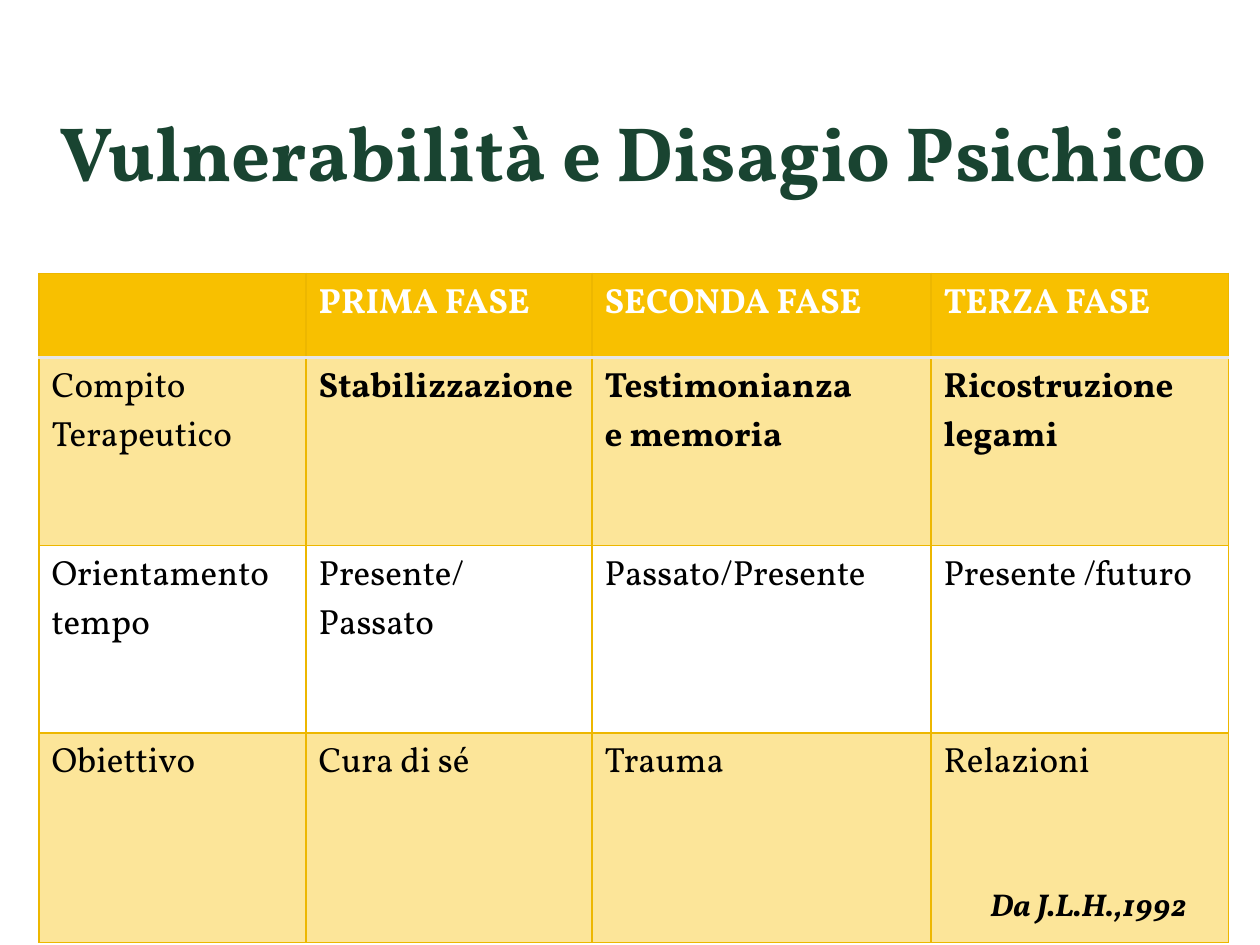
from dataclasses import dataclass

from lxml.etree import SubElement
from pptx import Presentation
from pptx.dml.color import RGBColor as RGB
from pptx.enum.text import MSO_ANCHOR as Anchor, PP_ALIGN as Align
from pptx.oxml import parse_xml
from pptx.oxml.ns import nsdecls, qn
from pptx.util import Inches, Pt


@dataclass(frozen=True)
class Theme:
    font: str = "Vollkorn"
    green: str = "194431"
    gold: str = "F8C000"
    edge: str = "EDB700"
    rule: str = "E7E7E7"
    white: str = "FFFFFF"
    black: str = "000000"
    title: int = 44
    body: int = 20
    note: int = 18


@dataclass(frozen=True)
class Row:
    height: float
    texts: tuple[str, ...]
    tint: int  # opacity of the gold fill, in percent
    bold: tuple[bool, ...] = (False,) * 4
    color: str = Theme.black


THEME = Theme()
LEFT, WIDTH = 0.31, 9.44
COLS = (2.12, 2.27, 2.69, 2.36)
ROWS = (
    Row(0.67, ("", "PRIMA FASE", "SECONDA FASE", "TERZA FASE"), 100,
        (True,) * 4, THEME.white),
    Row(1.49, ("Compito\nTerapeutico", "Stabilizzazione",
               "Testimonianza\ne memoria", "Ricostruzione legami"), 40,
        (False, True, True, True)),
    Row(1.49, ("Orientamento tempo", "Presente/Passato",
               "Passato/Presente", "Presente /futuro"), 0),
    Row(1.66, ("Obiettivo", "Cura di sé", "Trauma", "Relazioni"), 40),
)


def style(par, size: int, color: str, bold: bool, italic: bool = False) -> None:
    font = par.font
    font.name, font.size = THEME.font, Pt(size)
    font.bold, font.italic = bold, italic
    font.color.rgb = RGB.from_string(color)


def add_title(slide, text: str) -> None:
    box = slide.shapes.add_textbox(
        Inches(LEFT), Inches(0.77), Inches(WIDTH), Inches(0.86))
    frame = box.text_frame
    frame.word_wrap = True
    frame.vertical_anchor = Anchor.MIDDLE
    frame.margin_top = frame.margin_bottom = 0
    par = frame.paragraphs[0]
    par.text, par.alignment = text, Align.CENTER
    style(par, THEME.title, THEME.green, True)


def tint_cell(cell, tint: int) -> None:
    if not tint:
        cell.fill.background()
        return
    cell.fill.solid()
    cell.fill.fore_color.rgb = RGB.from_string(THEME.gold)
    if tint < 100:
        color = cell._tc.tcPr.find(f".//{qn('a:srgbClr')}")
        SubElement(color, qn("a:alpha")).set("val", str(tint * 1000))


def edge_cell(cell, row: int) -> None:
    """Draw gold borders, with a thicker grey rule under the header."""
    grey = {(0, "B"), (1, "T")}
    props = cell._tc.get_or_add_tcPr()
    for spot, side in enumerate("LRTB"):
        color, width = ((THEME.rule, 2) if (row, side) in grey
                        else (THEME.edge, 1))
        props.insert(spot, parse_xml(
            f'<a:ln{side} {nsdecls("a")} w="{Pt(width)}"><a:solidFill>'
            f'<a:srgbClr val="{color}"/></a:solidFill></a:ln{side}>'))


def add_grid(slide):
    height = sum(row.height for row in ROWS)
    grid = slide.shapes.add_table(
        len(ROWS), len(COLS), Inches(LEFT), Inches(2.17),
        Inches(WIDTH), Inches(height)).table
    grid.horz_banding = grid.first_row = False
    for col, width in zip(grid.columns, COLS):
        col.width = Inches(width)
    for r, row in enumerate(ROWS):
        grid.rows[r].height = Inches(row.height)
        for c, (text, bold) in enumerate(zip(row.texts, row.bold)):
            cell = grid.cell(r, c)
            cell.text_frame.text = text
            for par in cell.text_frame.paragraphs:
                style(par, THEME.body, row.color, bold)
            tint_cell(cell, row.tint)
            edge_cell(cell, r)
    return grid


def add_note(cell, text: str) -> None:
    par = cell.text_frame.add_paragraph()
    par.text, par.space_before = text, Pt(56)
    par._p.get_or_add_pPr().set("marL", str(Inches(0.37)))
    style(par, THEME.note, THEME.black, True, True)


def main() -> None:
    deck = Presentation()
    deck.slide_width, deck.slide_height = Inches(10), Inches(7.5)
    slide = deck.slides.add_slide(deck.slide_layouts[6])
    add_title(slide, "Vulnerabilità e Disagio Psichico")
    grid = add_grid(slide)
    add_note(grid.cell(len(ROWS) - 1, len(COLS) - 1), "Da J.L.H.,1992")
    deck.save("out.pptx")


if __name__ == "__main__":
    main()
